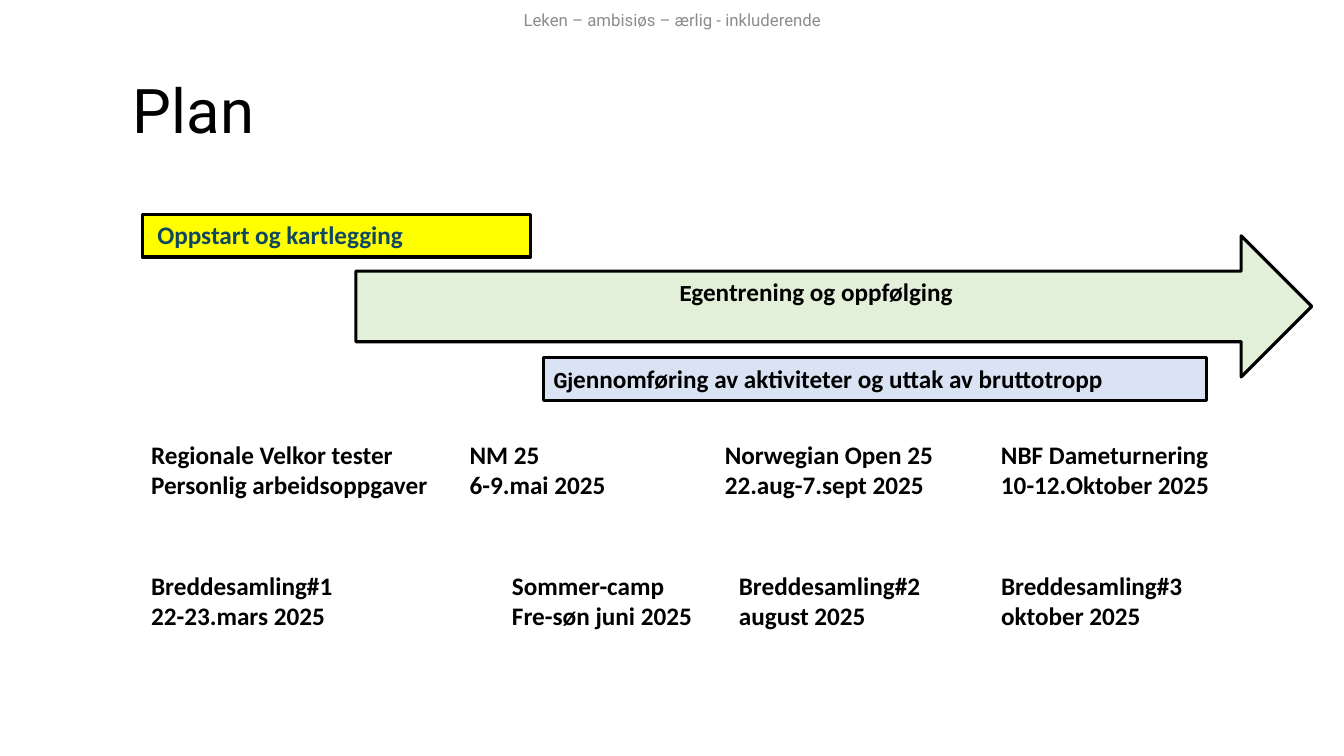
"""Build the plan slide with its timeline bars and event dates."""
from pptx import Presentation
from pptx.dml.color import RGBColor
from pptx.enum import shapes, text
from pptx.util import Inches, Pt

BLACK = RGBColor(0x00, 0x00, 0x00)
GREY = RGBColor(0x8C, 0x8C, 0x8C)
NAVY = RGBColor(0x0F, 0x47, 0x61)
YELLOW = RGBColor(0xFF, 0xFF, 0x00)
GREEN = RGBColor(0xE2, 0xF0, 0xD9)
BLUE = RGBColor(0xDA, 0xE3, 0xF3)

RECTANGLE = shapes.MSO_SHAPE.RECTANGLE
ARROW = shapes.MSO_SHAPE.RIGHT_ARROW
LEFT, CENTER = text.PP_ALIGN.LEFT, text.PP_ALIGN.CENTER
TOP, MIDDLE = text.MSO_ANCHOR.TOP, text.MSO_ANCHOR.MIDDLE


class PlanSlide:
    """Hold the text styles and the slide being filled."""

    HEADING = {"name": "Roboto", "size": Pt(44)}
    MOTTO = {"name": "Roboto", "size": Pt(12)}
    INITIAL = {"name": "Roboto", "size": Pt(15), "bold": True}
    BODY = {"name": "Calibri", "size": Pt(18), "bold": True}

    def __init__(self, slide):
        """Keep the slide to draw on."""
        self.slide = slide

    def fill_text(self, frame, lines, color, align=LEFT, anchor=TOP):
        """Fill a text frame with lines made of (words, style) runs."""
        frame.word_wrap = True
        frame.vertical_anchor = anchor
        for index, line in enumerate(lines):
            paragraph = frame.add_paragraph() if index else frame.paragraphs[0]
            paragraph.alignment = align
            for words, style in line:
                run = paragraph.add_run()
                run.text = words
                run.font.color.rgb = color
                for key, value in style.items():
                    setattr(run.font, key, value)

    def label(self, box, lines, style, color=BLACK, align=LEFT, anchor=TOP):
        """Add a text box with one style throughout."""
        frame = self.slide.shapes.add_textbox(*map(Inches, box)).text_frame
        self.fill_text(frame, [[(line, style)] for line in lines], color, align, anchor)
        return frame

    def bar(self, kind, box, fill, runs, color=BLACK, align=LEFT, indent=0.1):
        """Add an outlined timeline bar with its caption."""
        phase = self.slide.shapes.add_shape(kind, *map(Inches, box))
        phase.shadow.inherit = False
        phase.fill.solid()
        phase.fill.fore_color.rgb = fill
        phase.line.color.rgb = BLACK
        phase.line.width = Pt(2.25)
        phase.text_frame.margin_left = Inches(indent)
        self.fill_text(phase.text_frame, [runs], color, align)


def main():
    """Create the presentation and save it."""
    deck = Presentation()
    deck.slide_width, deck.slide_height = Inches(13.33), Inches(7.5)
    plan = PlanSlide(deck.slides.add_slide(deck.slide_layouts[6]))
    body, initial = plan.BODY, plan.INITIAL

    heading = plan.label((1.22, 0.4, 9.73, 1.45), ["Plan"], plan.HEADING, anchor=MIDDLE)
    heading.paragraphs[0].line_spacing = 0.9
    plan.label((4.42, 0, 4.5, 0.4), ["Leken – ambisiøs – ærlig - inkluderende"],
               plan.MOTTO, GREY, CENTER, MIDDLE)

    plan.bar(ARROW, (3.53, 2.34, 9.48, 1.4), GREEN,
             [("E", initial), ("gentrening og oppfølging", body)], align=CENTER)
    plan.bar(RECTANGLE, (1.41, 2.13, 3.85, 0.42), YELLOW,
             [("Oppstart og kartlegging", body)], NAVY, indent=0.15)
    plan.bar(RECTANGLE, (5.39, 3.55, 6.58, 0.42), BLUE,
             [("Gj", initial),
              ("ennomføring av aktiviteter og uttak av bruttotropp", body)])

    event_rows = {
        4.31: [
            (1.4, 3.02, "Regionale Velkor tester", "Personlig arbeidsoppgaver"),
            (4.56, 1.66, "NM 25", "6-9.mai 2025"),
            (7.09, 2.73, "Norwegian Open 25", "22.aug-7.sept 2025"),
            (9.83, 2.73, "NBF Dameturnering", "10-12.Oktober 2025"),
        ],
        5.61: [
            (1.4, 2.12, "Breddesamling#1", "22-23.mars 2025"),
            (4.98, 2.1, "Sommer-camp", "Fre-søn juni 2025"),
            (7.23, 2.12, "Breddesamling#2", "august 2025"),
            (9.83, 2.12, "Breddesamling#3", "oktober 2025"),
        ],
    }
    for top, events in event_rows.items():
        for left, width, event, date in events:
            plan.label((left, top, width, 0.71), [event, date], body)

    deck.save("out.pptx")


if __name__ == "__main__":
    main()
